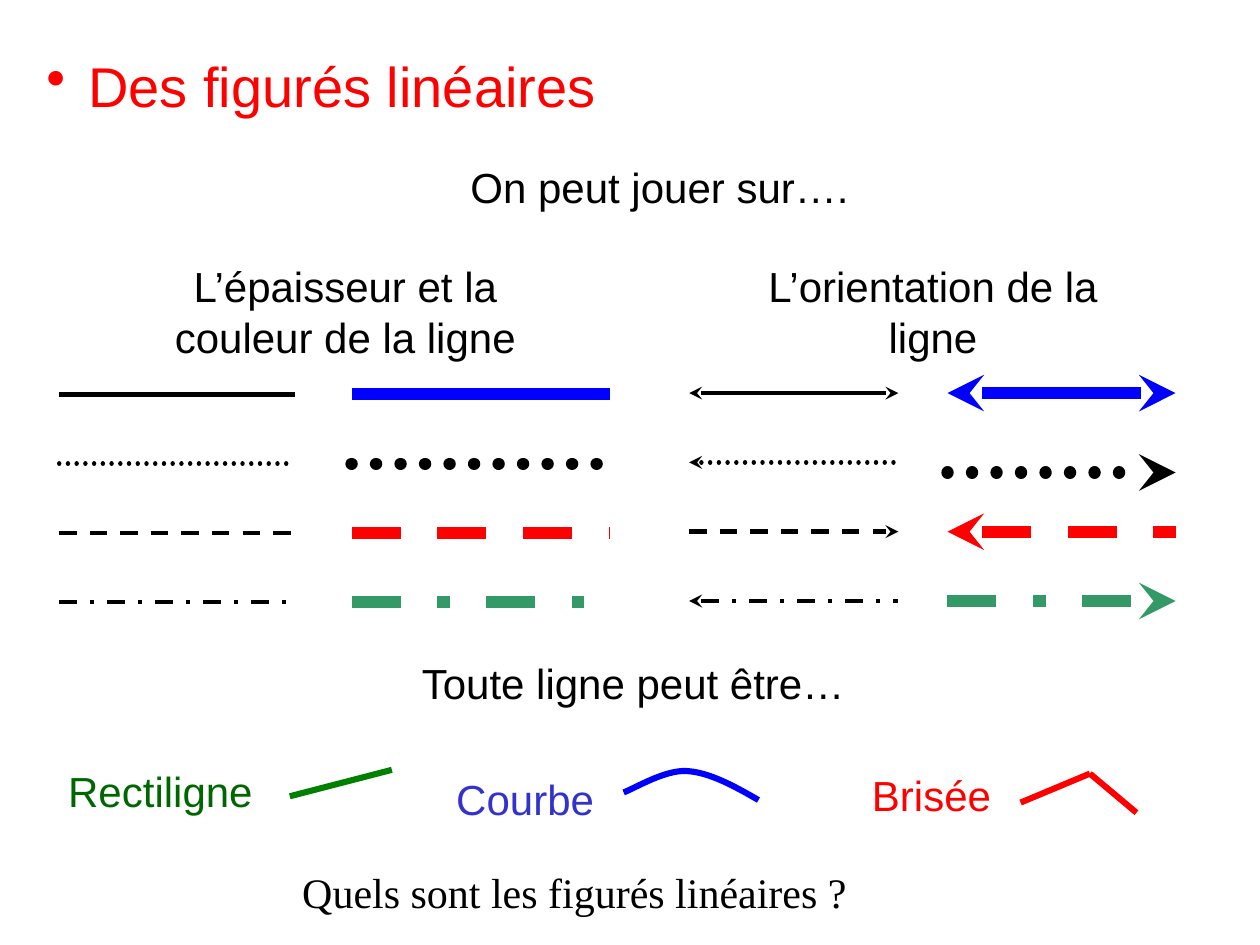
"""Build a slide showing the kinds of linear map symbols."""
from lxml import etree
from pptx import Presentation
from pptx import util as u
from pptx.dml.color import RGBColor
from pptx.enum import dml, shapes, text
from pptx.oxml.ns import qn

color = RGBColor.from_string
LEFT, CENTER = text.PP_ALIGN.LEFT, text.PP_ALIGN.CENTER
SOLID, DOT = dml.MSO_LINE.SOLID, dml.MSO_LINE.ROUND_DOT
DASH, DASH_DOT = dml.MSO_LINE.DASH, dml.MSO_LINE.DASH_DOT

presentation = Presentation()
presentation.slide_width, presentation.slide_height = u.Inches(10), u.Inches(7.5)
slide = presentation.slides.add_slide(presentation.slide_layouts[6])


def add_label(box, words, hex_color="000000", align=LEFT, size=24, font="Arial"):
    label = slide.shapes.add_textbox(*map(u.Inches, box))
    label.text_frame.word_wrap = True
    label.text_frame.text = words
    paragraph = label.text_frame.paragraphs[0]
    paragraph.alignment = align
    run_font = paragraph.runs[0].font
    run_font.size, run_font.name = u.Pt(size), font
    run_font.color.rgb = color(hex_color)
    return paragraph


def add_line(start, end, hex_color, width, dash=SOLID, arrows=()):
    connector = slide.shapes.add_connector(
        shapes.MSO_CONNECTOR.STRAIGHT, *map(u.Inches, (*start, *end)))
    connector.line.color.rgb = color(hex_color)
    connector.line.width = u.Pt(width)
    connector.line.dash_style = dash
    properties = connector._element.spPr
    outline = properties.find(qn("a:ln"))
    if dash == DOT:
        outline.set("cap", "rnd")
    for arrow in arrows:
        etree.SubElement(outline, qn(f"a:{arrow}"), type="stealth")
    etree.SubElement(properties, qn("a:effectLst"))


title = add_label((0.27, 0.36, 5.04, 0.64), " Des figurés linéaires", "FF0000", size=32)
title_properties = title._p.get_or_add_pPr()
title_properties.set("marL", str(u.Inches(0.21)))
title_properties.set("indent", str(-u.Inches(0.21)))
etree.SubElement(title_properties, qn("a:buChar"), char="•")

for box, words in (
    ((2.95, 1.23, 4.57, 0.5), "On peut jouer sur…."),
    ((0.2, 5.17, 9.65, 0.5), "Toute ligne peut être…"),
    ((1.18, 2.02, 3.12, 0.9), "L’épaisseur et la couleur de la ligne"),
    ((5.87, 2.02, 3.07, 0.9), "L’orientation de la ligne"),
):
    add_label(box, words, align=CENTER)

dashes = (SOLID, DOT, DASH, DASH_DOT)
black = ("000000",) * 4
bright = ("0000FF", "000000", "FF0000", "339966")
plain = ((),) * 4
head, tail, both = ("headEnd",), ("tailEnd",), ("headEnd", "tailEnd")
row_gap = 0.55
columns = (
    (0.47, 2.34, 3.13, 2.5, black, plain),
    (2.79, 4.84, 3.13, 7, bright, plain),
    (5.47, 7.13, 3.12, 2.5, black, (both, head, tail, head)),
    (7.52, 9.33, 3.12, 7, bright, (both, tail, head, tail)),
)
for left, right, top, width, colors, arrow_sets in columns:
    for row, (dash, hex_color, arrows) in enumerate(zip(dashes, colors, arrow_sets)):
        y = top + row * row_gap
        if hex_color == "000000" and arrows == tail and dash == DOT:
            y = 3.75
        add_line((left, y), (right, y), hex_color, width, dash, arrows)

add_label((0.35, 6.03, 1.99, 0.5), " Rectiligne", "006600")
add_line((2.3, 6.32), (3.11, 6.11), "008000", 3.5)

add_label((3.43, 6.09, 1.52, 0.5), " Courbe", "3333CC")
curve_points = ((4.95, 6.29), (5.05, 6.25), (5.28, 6.11), (5.45, 6.12),
                (5.63, 6.13), (5.83, 6.24), (6.02, 6.35))
curve_start, *curve_rest = [tuple(map(u.Inches, point)) for point in curve_points]
builder = slide.shapes.build_freeform(*curve_start)
builder.add_line_segments(curve_rest, close=False)
curve = builder.convert_to_shape()
curve.shadow.inherit = False
curve.fill.background()
curve.line.color.rgb = color("0000FF")
curve.line.width = u.Pt(3.5)
segments = list(curve._element.iter(qn("a:lnTo")))
for first in range(0, len(segments), 3):
    bezier = etree.Element(qn("a:cubicBezTo"))
    segments[first].addprevious(bezier)
    for segment in segments[first:first + 3]:
        bezier.append(segment[0])
        segment.getparent().remove(segment)

add_label((6.73, 6.06, 1.37, 0.5), " Brisée", "FF0000")
corner = (8.65, 6.14)
add_line((8.1, 6.37), corner, "FF0000", 3.5)
add_line(corner, (9.02, 6.45), "FF0000", 3.5)

add_label((2.3, 6.83, 5.18, 0.5), "Quels sont les figurés linéaires ?",
          font="Times New Roman")

presentation.save("out.pptx")
